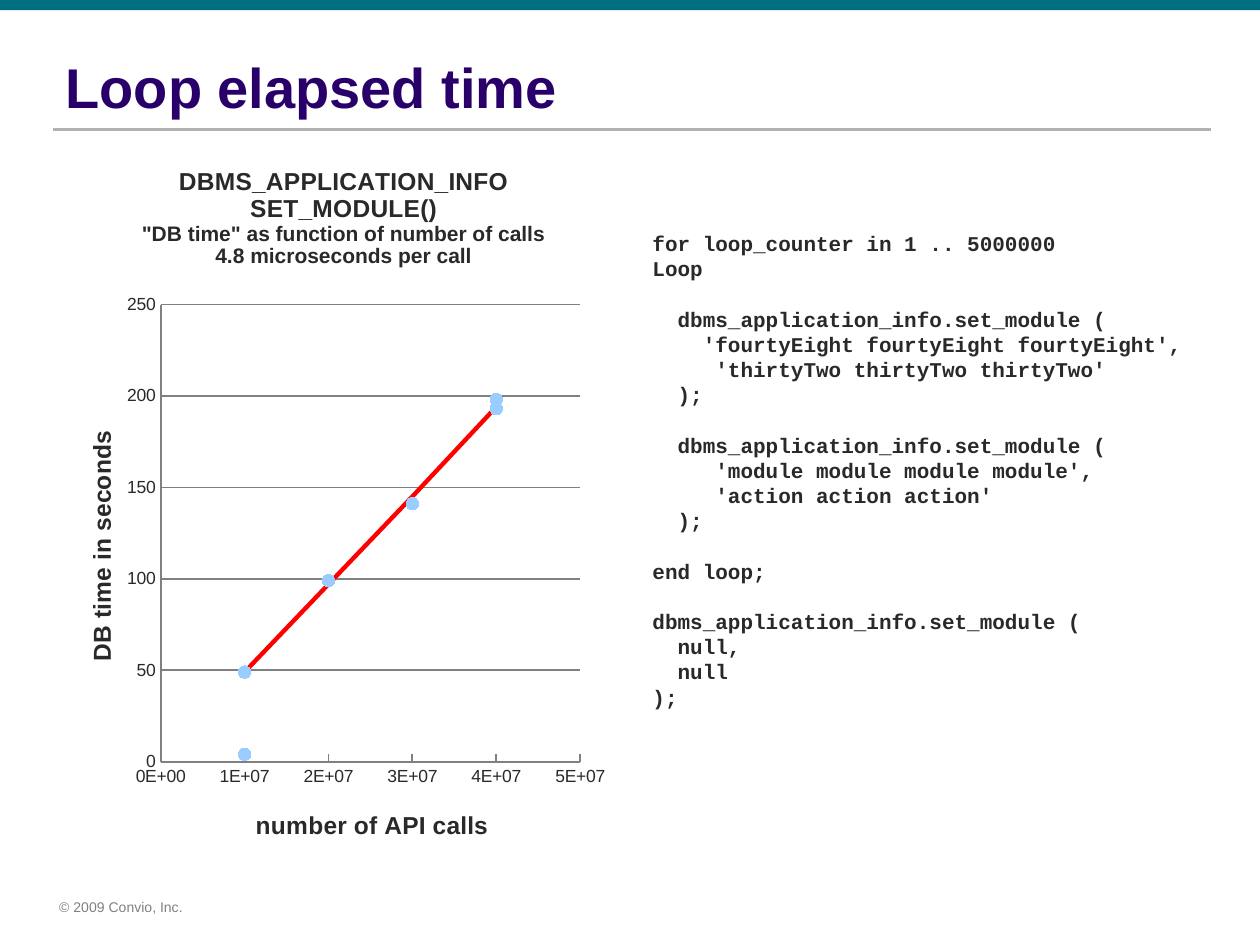
from lxml import etree
from pptx import Presentation
from pptx.chart.data import XyChartData
from pptx.dml.color import RGBColor
from pptx.enum.chart import XL_CHART_TYPE, XL_MARKER_STYLE, XL_TICK_MARK
from pptx.enum.shapes import MSO_CONNECTOR as CONN, MSO_SHAPE as SHAPE
from pptx.enum.text import MSO_ANCHOR as ANCHOR, PP_ALIGN as ALIGN
from pptx.oxml import parse_xml
from pptx.oxml.ns import nsdecls, qn
from pptx.util import Inches, Pt

THEME = {
    "title": "29006A", "text": "292929", "bar": "006F82", "rule": "B2B2B2",
    "footer": "808080", "grid": "808080", "marker": "99CCFF", "fit": "FF0000",
    "sans": "Arial", "mono": "Courier New",
    "title_pt": 32, "code_pt": 12, "code_pitch": 14.4, "footer_pt": 8,
    "chart_pt": 10, "heading_pt": 14, "subheading_pt": 12,
}

TITLE = "Loop elapsed time"
FOOTER = "© 2009 Convio, Inc."

# Each block of code is set off from the one before by one line of space.
CODE_BLOCKS = [
    ["for loop_counter in 1 .. 5000000",
     "Loop"],
    ["  dbms_application_info.set_module (",
     "    'fourtyEight fourtyEight fourtyEight',",
     "     'thirtyTwo thirtyTwo thirtyTwo'",
     "  );"],
    ["  dbms_application_info.set_module (",
     "     'module module module module',",
     "     'action action action'",
     "  );"],
    ["end loop;"],
    ["dbms_application_info.set_module (",
     "  null,",
     "  null",
     ");"],
]

CHART_TITLE = [
    ("DBMS_APPLICATION_INFO", "heading_pt"),
    ("SET_MODULE()", "heading_pt"),
    ('"DB time" as function of number of calls', "subheading_pt"),
    ("4.8 microseconds per call", "subheading_pt"),
]
X_TITLE = [("number of API calls", "heading_pt")]
Y_TITLE = [("DB time in seconds", "heading_pt")]
CALLS = [10000000, 10000000, 20000000, 30000000, 40000000, 40000000]
SERIES = {
    "Series 1": [4, 49, 99, 141, 193, 198],
    "Series 2": [49, 49, 97, 145, 194, 194],
}


def color(key):
    return RGBColor.from_string(THEME[key])


def style(font, face, size, fill, bold=False):
    font.name, font.size, font.bold = THEME[face], Pt(THEME[size]), bold
    font.color.rgb = color(fill)


def set_line(line, key, width):
    line.color.rgb = color(key)
    line.width = Pt(width)


def manual_layout(parent, x, y, w=None, h=None):
    """Place a chart title or plot area by fractions of the chart's size."""
    for old in parent.findall(qn("c:layout")):
        parent.remove(old)
    layout = parse_xml(f"<c:layout {nsdecls('c')}><c:manualLayout/></c:layout>")
    values = [("xMode", "edge"), ("yMode", "edge"), ("x", x), ("y", y)]
    if w is not None:
        values = [("layoutTarget", "inner")] + values + [("w", w), ("h", h)]
    for tag, value in values:
        etree.SubElement(layout[0], qn(f"c:{tag}")).set("val", str(value))
    text = parent.find(qn("c:tx"))
    if text is None:
        parent.insert(0, layout)
    else:
        text.addnext(layout)


def add_chart_heading(title, lines, x, y):
    tf = title.text_frame
    for i, (text, size) in enumerate(lines):
        p = tf.paragraphs[0] if i == 0 else tf.add_paragraph()
        p.text = text
        style(p.font, "sans", size, "text", True)
    manual_layout(title._element, x, y)


def add_frame(slide):
    bar = slide.shapes.add_shape(SHAPE.RECTANGLE, 0, 0, Inches(10), Inches(0.08))
    bar.shadow.inherit = False
    bar.fill.solid()
    bar.fill.fore_color.rgb = color("bar")
    bar.line.fill.background()

    rule = slide.shapes.add_connector(
        CONN.STRAIGHT, Inches(0.42), Inches(1.03), Inches(9.61), Inches(1.03))
    set_line(rule.line, "rule", 1.5)
    etree.SubElement(rule._element.spPr, qn("a:effectLst"))

    footer = slide.shapes.add_textbox(
        Inches(0.42), Inches(7.08), Inches(1.15), Inches(0.24))
    tf = footer.text_frame
    tf.word_wrap = False
    tf.margin_left = Inches(0.05)
    p = tf.paragraphs[0]
    p.text = FOOTER
    style(p.font, "sans", "footer_pt", "footer")


def add_title(slide):
    title = slide.shapes.title
    title.left, title.top = Inches(0.42), Inches(0.37)
    title.width, title.height = Inches(9.17), Inches(0.63)
    tf = title.text_frame
    tf.vertical_anchor = ANCHOR.BOTTOM
    p = tf.paragraphs[0]
    p.text = TITLE
    p.alignment = ALIGN.LEFT
    style(p.font, "sans", "title_pt", "title", True)


def add_code(slide):
    box = slide.shapes.add_textbox(
        Inches(5.08), Inches(1.78), Inches(4.5), Inches(4))
    tf = box.text_frame
    tf.word_wrap = True
    p = None
    for block in CODE_BLOCKS:
        for i, line in enumerate(block):
            new_block = p is not None and i == 0
            p = tf.paragraphs[0] if p is None else tf.add_paragraph()
            p.text = line
            p.line_spacing = Pt(THEME["code_pitch"])
            p.space_before = Pt(THEME["code_pitch"] if new_block else 0)
            style(p.font, "mono", "code_pt", "text", True)


def add_timing_chart(slide):
    data = XyChartData()
    for name, seconds in SERIES.items():
        series = data.add_series(name)
        for x, y in zip(CALLS, seconds):
            series.add_data_point(x, y)
    chart = slide.shapes.add_chart(
        XL_CHART_TYPE.XY_SCATTER_LINES, Inches(0.42), Inches(1.17),
        Inches(4.5), Inches(5.67), data).chart
    chart.has_legend = False
    style(chart.font, "sans", "chart_pt", "text")
    add_chart_heading(chart.chart_title, CHART_TITLE, 0.15, 0.02)
    manual_layout(chart._chartSpace.chart.plotArea, 0.19, 0.22, 0.74, 0.64)
    chart.plots[0].vary_by_categories = False

    axes = [
        (chart.category_axis, X_TITLE, 0.35, 0.92, 50000000, 10000000, "0E+00",
         XL_TICK_MARK.INSIDE),
        (chart.value_axis, Y_TITLE, 0.05, 0.39, 250, 50, "#,##0",
         XL_TICK_MARK.NONE),
    ]
    for axis, title, x, y, top, step, number_format, tick in axes:
        axis.minimum_scale, axis.maximum_scale, axis.major_unit = 0, top, step
        axis.major_tick_mark, axis.minor_tick_mark = tick, XL_TICK_MARK.NONE
        axis.tick_labels.number_format = number_format
        axis.tick_labels.number_format_is_linked = False
        set_line(axis.format.line, "grid", 1)
        add_chart_heading(axis.axis_title, title, x, y)
    chart.category_axis.has_major_gridlines = False
    set_line(chart.value_axis.major_gridlines.format.line, "grid", 1)

    measured, fit = chart.plots[0].series
    measured.smooth = fit.smooth = False
    measured.format.line.fill.background()
    marker = measured.marker
    marker.style, marker.size = XL_MARKER_STYLE.CIRCLE, 7
    marker.format.fill.solid()
    marker.format.fill.fore_color.rgb = color("marker")
    marker.format.line.color.rgb = color("marker")
    fit.marker.style = XL_MARKER_STYLE.NONE
    set_line(fit.format.line, "fit", 2.5)


def main():
    prs = Presentation()
    prs.slide_width, prs.slide_height = Inches(10), Inches(7.5)
    slide = prs.slides.add_slide(prs.slide_layouts[5])
    add_frame(slide)
    add_title(slide)
    add_code(slide)
    add_timing_chart(slide)
    prs.save("out.pptx")


if __name__ == "__main__":
    main()
